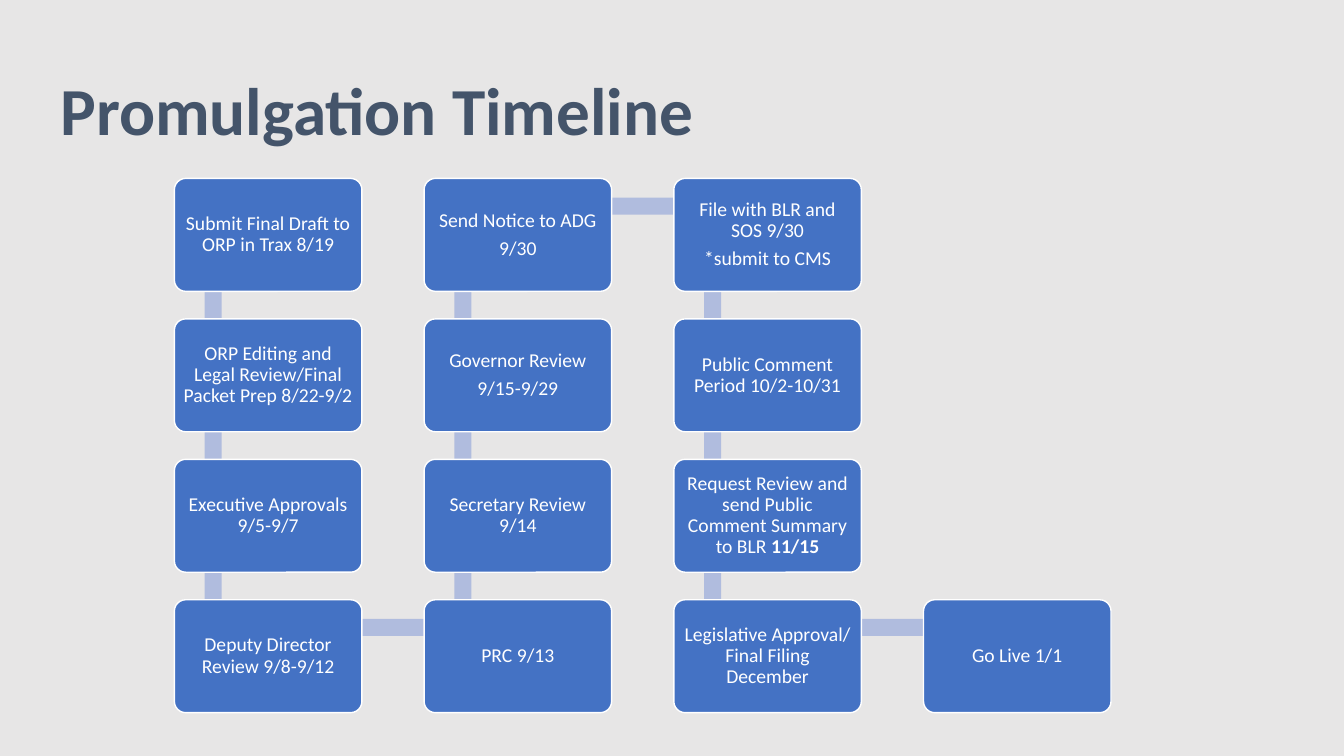
from itertools import pairwise

from pptx import Presentation
from pptx.dml.color import RGBColor
from pptx.enum import shapes, text
from pptx.util import Inches, Pt

ROWS = 4
LEFT, TOP = 1.73, 1.77
BOX_WIDTH, BOX_HEIGHT = 1.86, 1.12
COLUMN_STEP, ROW_STEP = 7.43 / 3, 4.18 / 3
BAR = 0.17

# Each step is a list of paragraphs; each paragraph is a list of (words, bold).
STEPS = [
    [[("Submit Final Draft to ORP in Trax 8/19", False)]],
    [[("ORP Editing and Legal Review/Final Packet Prep 8/22-9/2", False)]],
    [[("Executive Approvals 9/5-9/7", False)]],
    [[("Deputy Director Review 9/8-9/12", False)]],
    [[("PRC 9/13", False)]],
    [[("Secretary Review 9/14", False)]],
    [[("Governor Review", False)], [("9/15-9/29", False)]],
    [[("Send Notice to ADG", False)], [("9/30", False)]],
    [[("File with BLR and SOS 9/30", False)], [("*submit to CMS", False)]],
    [[("Public Comment Period 10/2-10/31", False)]],
    [[("Request Review and send Public Comment Summary to BLR ", False),
      ("11/15", True)]],
    [[("Legislative Approval/ Final Filing December", False)]],
    [[("Go Live 1/1", False)]],
]


def paint(color, value):
    color.rgb = RGBColor.from_string(value)


def add_span(para, words, size, color, bold):
    span = para.add_run()
    span.text = words
    span.font.name = "Calibri"
    span.font.size = Pt(size)
    span.font.bold = bold
    paint(span.font.color, color)


def add_block(page, kind, left, top, width, height, fill):
    block = page.shapes.add_shape(
        kind, Inches(left), Inches(top), Inches(width), Inches(height))
    block.shadow.inherit = False
    block.fill.solid()
    paint(block.fill.fore_color, fill)
    block.line.fill.background()
    return block


def add_title(page, words):
    box = page.shapes.add_textbox(Inches(0.5), Inches(0.61), Inches(8.5), Inches(0.93))
    frame = box.text_frame
    frame.word_wrap = True
    frame.vertical_anchor = text.MSO_ANCHOR.BOTTOM
    para = frame.paragraphs[0]
    para.line_spacing = 0.9
    add_span(para, words, 48, "44546A", True)


def step_corner(index):
    """Return the left and top of a step; columns run down, then up, in turn."""
    column, row = divmod(index, ROWS)
    if column % 2:
        row = ROWS - 1 - row
    return LEFT + column * COLUMN_STEP, TOP + row * ROW_STEP


def add_bar(page, start, end):
    """Join two neighbouring steps with a bar that runs behind both."""
    left, top = min(start, end)
    if start[0] == end[0]:
        place = left + 0.3, top + 0.28, BAR, ROW_STEP
    else:
        place = left + 0.38, top + 0.19, COLUMN_STEP, BAR
    add_block(page, shapes.MSO_SHAPE.RECTANGLE, *place, "B0BCDE")


def add_step(page, corner, paragraphs):
    box = add_block(page, shapes.MSO_SHAPE.ROUNDED_RECTANGLE, *corner,
                    BOX_WIDTH, BOX_HEIGHT, "4472C4")
    box.adjustments[0] = 0.1
    paint(box.line.color, "FFFFFF")
    box.line.width = Pt(1)
    frame = box.text_frame
    frame.word_wrap = True
    frame.vertical_anchor = text.MSO_ANCHOR.MIDDLE
    frame.margin_left = frame.margin_right = Inches(0.06)
    frame.margin_top = frame.margin_bottom = Inches(0.06)
    for number, spans in enumerate(paragraphs):
        para = frame.add_paragraph() if number else frame.paragraphs[0]
        para.alignment = text.PP_ALIGN.CENTER
        para.line_spacing = 0.9
        para.space_after = Pt(4.9)
        for words, bold in spans:
            add_span(para, words, 14, "FFFFFF", bold)


def main():
    deck = Presentation()
    deck.slide_width, deck.slide_height = Inches(13.33), Inches(7.5)
    page = deck.slides.add_slide(deck.slide_layouts[6])
    page.background.fill.solid()
    paint(page.background.fill.fore_color, "E7E6E6")

    add_title(page, "Promulgation Timeline")
    corners = [step_corner(index) for index in range(len(STEPS))]
    for start, end in pairwise(corners):
        add_bar(page, start, end)
    for corner, paragraphs in zip(corners, STEPS):
        add_step(page, corner, paragraphs)
    deck.save("out.pptx")


if __name__ == "__main__":
    main()
